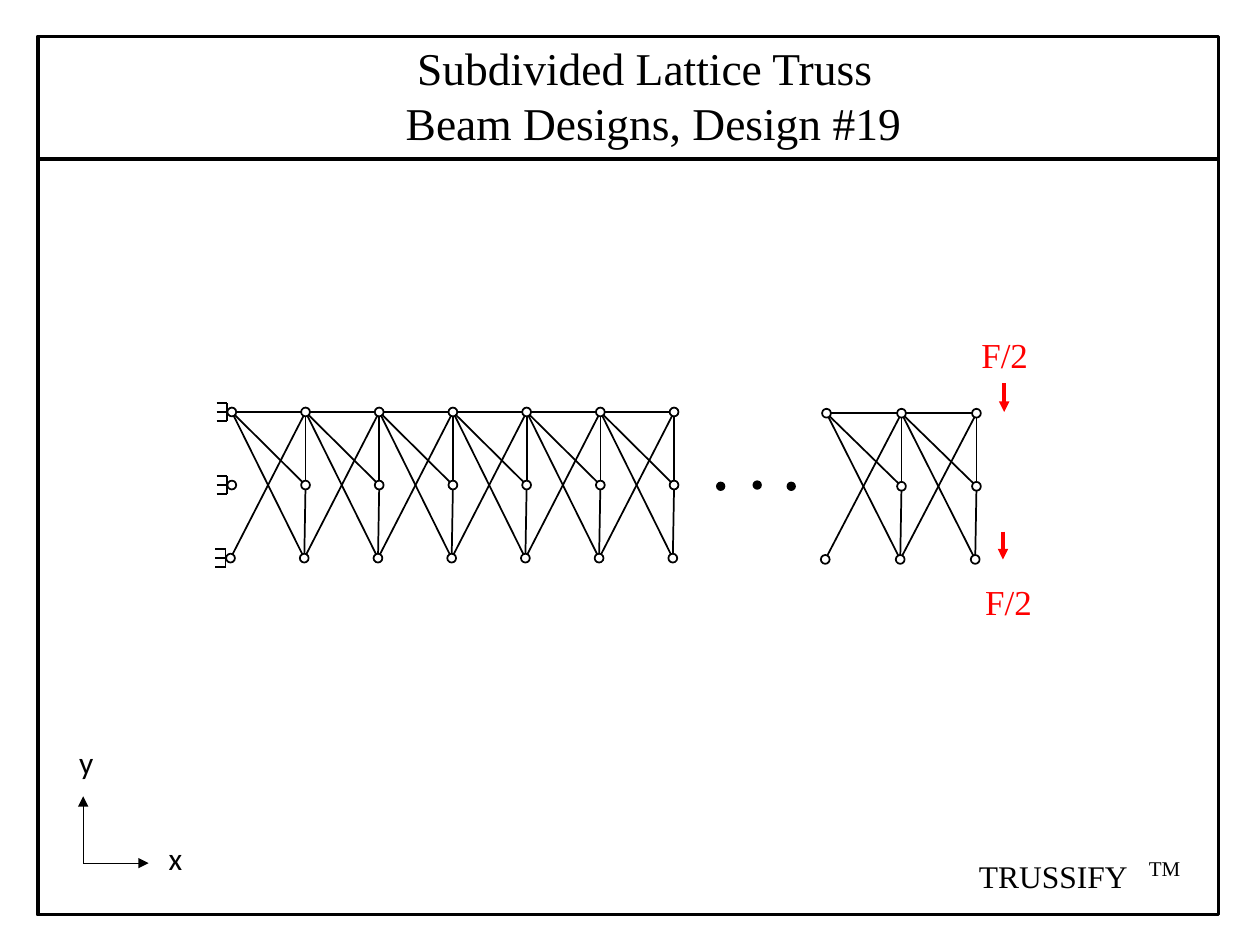
from pptx import Presentation
from pptx.dml.color import RGBColor
from pptx.enum.shapes import MSO_CONNECTOR, MSO_SHAPE
from pptx.enum.text import MSO_ANCHOR, MSO_AUTO_SIZE, PP_ALIGN
from pptx.oxml.ns import qn
from pptx.util import Inches, Pt
from lxml.etree import SubElement

BLACK, WHITE, RED = "000000", "FFFFFF", "FF0000"
SERIF, SANS = "Times New Roman", "Calibri"
TITLE = [" Subdivided Lattice Truss", "Beam Designs, Design #19"]
FRAME = (0.3, 0.29, 9.37, 6.97)
DIVIDER_Y = 1.26
ROW_PITCH = 0.58
BOTTOM_SHIFT = -0.01
TRUSSES = [
    {"left": 1.84, "right": 5.35, "top": 3.27, "bays": 6, "fixed": True},
    {"left": 6.56, "right": 7.75, "top": 3.28, "bays": 2, "fixed": False},
]
ELLIPSIS = [(5.72, 3.86), (6.01, 3.85), (6.28, 3.86)]
ARROWS = [
    ((0.66, 6.85), (1.18, 6.85), BLACK, 0.5),
    ((0.66, 6.85), (0.66, 6.32), BLACK, 0.5),
    ((7.97, 3.04), (7.97, 3.27), RED, 2),
    ((7.96, 4.22), (7.96, 4.44), RED, 2),
]
LABELS = [
    ("x", (1.24, 6.61, 0.31, 0.4), SANS, 18, BLACK),
    ("y", (0.53, 5.85, 0.31, 0.4), SANS, 18, BLACK),
    ("F/2", (7.69, 2.6, 0.7, 0.44), SERIF, 20, RED),
    ("F/2", (7.72, 4.56, 0.7, 0.44), SERIF, 20, RED),
    ("TRUSSIFY", (7.67, 6.75, 1.52, 0.4), SERIF, 18, BLACK),
    ("TM", (9.02, 6.74, 0.51, 0.3), SERIF, 12, BLACK),
]

deck = Presentation()
deck.slide_width, deck.slide_height = Inches(10), Inches(7.5)
page = deck.slides.add_slide(deck.slide_layouts[5])


def color(value):
    return RGBColor.from_string(value)


def add_line(start, end, ink=BLACK, width=1, arrow=False):
    line = page.shapes.add_connector(
        MSO_CONNECTOR.STRAIGHT, *(Inches(value) for value in (*start, *end)))
    line.line.color.rgb = color(ink)
    line.line.width = Pt(width)
    if arrow:
        SubElement(line.line._get_or_add_ln(), qn("a:tailEnd"), type="triangle")
    SubElement(line._element.spPr, qn("a:effectLst"))


def add_figure(kind, area, fill=None, width=1):
    figure = page.shapes.add_shape(kind, *(Inches(value) for value in area))
    figure.shadow.inherit = False
    if fill:
        figure.fill.solid()
        figure.fill.fore_color.rgb = color(fill)
    else:
        figure.fill.background()
    figure.line.color.rgb = color(BLACK)
    figure.line.width = Pt(width)


def add_dot(center, size, fill):
    x, y = center
    add_figure(MSO_SHAPE.OVAL, (x - size / 2, y - size / 2, size, size), fill)


def write(text, area, box=None, font=SERIF, size=18, ink=BLACK):
    box = box or page.shapes.add_textbox(0, 0, 0, 0)
    box.left, box.top, box.width, box.height = (Inches(value) for value in area)
    frame = box.text_frame
    frame.word_wrap = True
    frame.auto_size = MSO_AUTO_SIZE.NONE
    frame.vertical_anchor = MSO_ANCHOR.TOP
    frame.text = text
    for para in frame.paragraphs:
        para.alignment = PP_ALIGN.LEFT
        for span in para.runs:
            span.font.name, span.font.size = font, Pt(size)
            span.font.color.rgb = color(ink)


def add_support(joint):
    x, y = joint
    wall, tip, half = x - 0.04, x - 0.12, 0.07
    add_line((wall, y - half), (wall, y + half))
    for tooth in (y - half, y, y + half):
        add_line((tip, tooth), (wall, tooth))


def add_truss(left, right, top, bays, fixed):
    pitch = (right - left) / bays
    columns = [left + pitch * index for index in range(bays + 1)]
    upper = [(x, top) for x in columns]
    middle = [(x, top + ROW_PITCH) for x in columns]
    lower = [(x + BOTTOM_SHIFT, top + 2 * ROW_PITCH) for x in columns]
    for near in range(bays):
        far = near + 1
        add_line(upper[near], upper[far])
        add_line(upper[near], middle[far])
        add_line(upper[near], lower[far])
        add_line(lower[near], upper[far])
        add_line(upper[far], middle[far])
        add_line(middle[far], lower[far])
    if fixed:
        for joint in (upper[0], middle[0], lower[0]):
            add_support(joint)
    else:
        middle = middle[1:]
    for joint in upper + middle + lower:
        add_dot(joint, 0.07, WHITE)


add_figure(MSO_SHAPE.RECTANGLE, FRAME, width=2)
add_line((FRAME[0], DIVIDER_Y), (FRAME[0] + FRAME[2], DIVIDER_Y), width=2)
write("\n".join(TITLE), (3.12, 0.27, 4.25, 0.98), page.shapes.title, size=26)
for truss in TRUSSES:
    add_truss(**truss)
for center in ELLIPSIS:
    add_dot(center, 0.06, BLACK)
for start, end, ink, width in ARROWS:
    add_line(start, end, ink, width, arrow=True)
for text, area, font, size, ink in LABELS:
    write(text, area, font=font, size=size, ink=ink)

deck.save("out.pptx")
